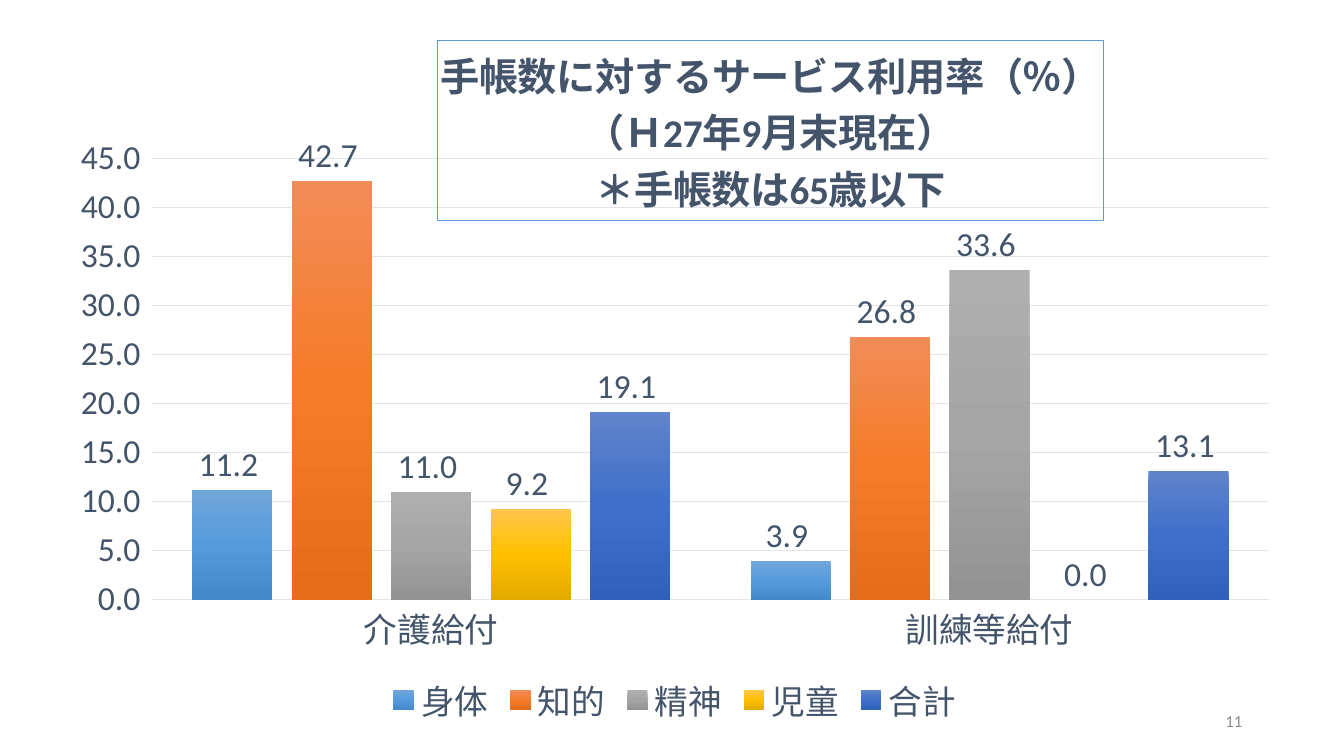
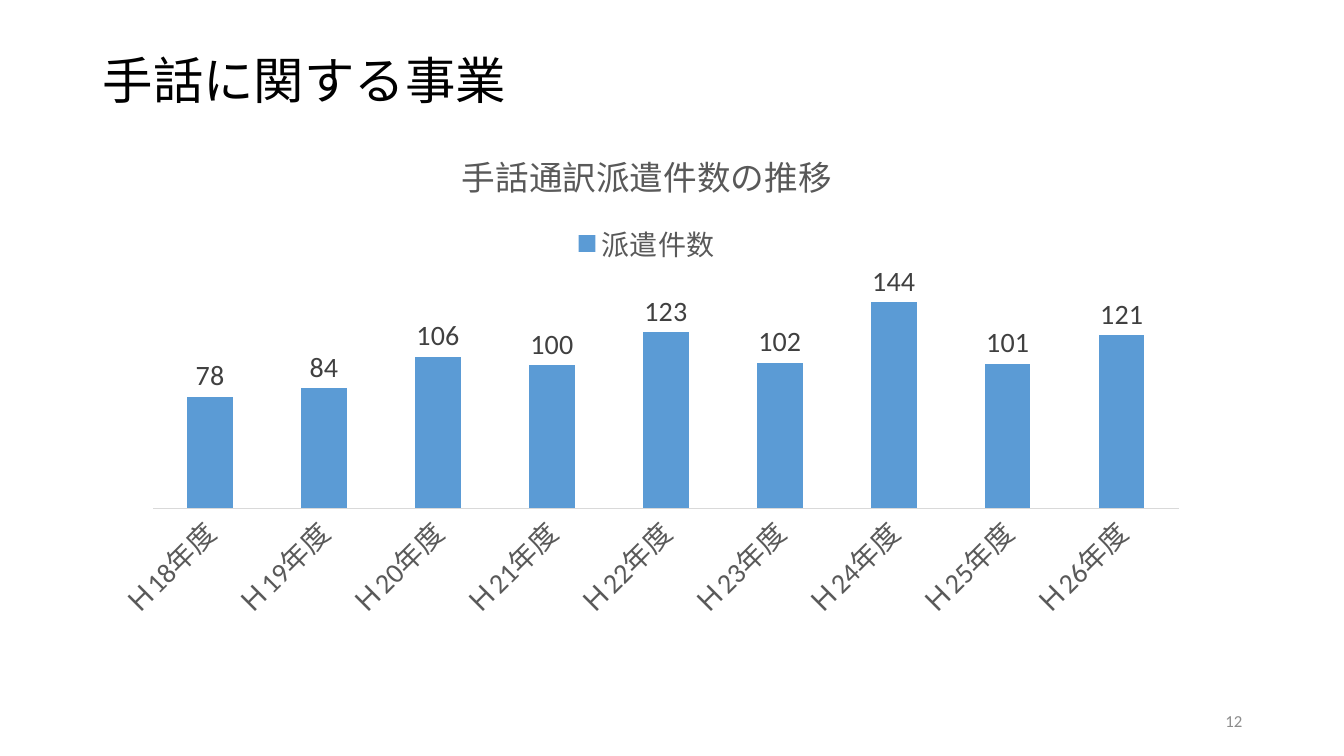
from copy import deepcopy

from lxml import etree
from pptx import Presentation
from pptx.chart.data import CategoryChartData
from pptx.dml.color import RGBColor
from pptx.enum.chart import XL_CHART_TYPE, XL_LABEL_POSITION, XL_LEGEND_POSITION, XL_TICK_MARK
from pptx.enum.text import MSO_ANCHOR, PP_ALIGN
from pptx.oxml.ns import qn
from pptx.util import Inches, Pt

COLUMNS = XL_CHART_TYPE.COLUMN_CLUSTERED
OUTSIDE_END = XL_LABEL_POSITION.OUTSIDE_END
LEGEND_TOP, LEGEND_BOTTOM = XL_LEGEND_POSITION.TOP, XL_LEGEND_POSITION.BOTTOM
NO_TICK = XL_TICK_MARK.NONE
MIDDLE = MSO_ANCHOR.MIDDLE
LEFT, RIGHT = PP_ALIGN.LEFT, PP_ALIGN.RIGHT

FONT = "Calibri"
BLACK, PAGE_GREY = "000000", "8C8C8C"
SLATE, GREY, DARK_GREY = "44546A", "595959", "404040"
BLUE = "5B9BD5"


def color(hex_string):
    return RGBColor.from_string(hex_string)


def place_manually(parent, index, **shares):
    for old_layout in parent.findall(qn("c:layout")):
        parent.remove(old_layout)
    layout = etree.Element(qn("c:layout"))
    manual = etree.SubElement(layout, qn("c:manualLayout"))
    for name, value in shares.items():
        etree.SubElement(manual, qn(f"c:{name}")).set("val", str(value))
    parent.insert(index, layout)


presentation = Presentation()
presentation.slide_width = Inches(13.33)
presentation.slide_height = Inches(7.5)
blank_layout = presentation.slide_layouts[6]

page_number_place = (9.42, 6.95, 3, 0.4)
heading_place = (0.92, 0.4, 11.5, 0.85)

pages = [
    {
        "number": "11",
        "heading": "",
        "place": (0.8, 0.4, 11.79, 6.85),
        "title": "手帳数に対するサービス利用率（％）\n（Ｈ27年9月末現在）\n＊手帳数は65歳以下",
        "title_font": {"size": Pt(28), "bold": True},
        "text_size": Pt(24),
        "text_color": SLATE,
        "label_color": SLATE,
        "line_color": "E0E5EB",
        "number_format": "0.0_ ",
        "legend": LEGEND_BOTTOM,
        "spacing": {"gap_width": 100, "overlap": -24},
        "value_axis": {"visible": True, "has_major_gridlines": True,
                       "minimum_scale": 0, "maximum_scale": 45, "major_unit": 5},
        "categories": ["介護給付", "訓練等給付"],
        "series": [
            ("身体", (11.2, 3.9), ("71A6DB", "559BDB", "448ACA")),
            ("知的", (42.7, 26.8), ("F18C57", "F67B28", "E56C19")),
            ("精神", (11, 33.6), ("AFAFAF", "A5A5A5", "939393")),
            ("児童", (9.2, 0), ("FFC64B", "FFC000", "E3AB00")),
            ("合計", (19.1, 13.1), ("6183CB", "3E70CA", "3062BB")),
        ],
    },
    {
        "number": "12",
        "heading": "手話に関する事業",
        "place": (0.92, 1.25, 10.99, 5.02),
        "title": "手話通訳派遣件数の推移",
        "title_font": {"size": Pt(24), "bold": False},
        "text_size": Pt(20),
        "text_color": GREY,
        "label_color": DARK_GREY,
        "line_color": "D9D9D9",
        "number_format": "General",
        "legend": LEGEND_TOP,
        "spacing": {"gap_width": 150},
        "value_axis": {"visible": False, "has_major_gridlines": False, "minimum_scale": 0},
        "categories": [f"Ｈ{year}年度" for year in range(18, 27)],
        "series": [("派遣件数", (78, 84, 106, 100, 123, 102, 144, 101, 121), (BLUE,))],
    },
]

charts = []
for page in pages:
    slide = presentation.slides.add_slide(blank_layout)

    texts = [
        (page["heading"], heading_place, LEFT, Pt(36), BLACK, 0.9),
        (page["number"], page_number_place, RIGHT, Pt(12), PAGE_GREY, 1.0),
    ]
    for text, place, alignment, size, text_color, line_spacing in texts:
        if not text:
            continue
        shape = slide.shapes.add_textbox(*map(Inches, place))
        text_frame = shape.text_frame
        text_frame.word_wrap = True
        text_frame.vertical_anchor = MIDDLE
        paragraph = text_frame.paragraphs[0]
        paragraph.alignment = alignment
        paragraph.line_spacing = line_spacing
        run = paragraph.add_run()
        run.text = text
        run.font.name = FONT
        run.font.size = size
        run.font.color.rgb = color(text_color)

    chart_data = CategoryChartData(number_format=page["number_format"])
    chart_data.categories = page["categories"]
    for name, values, _ in page["series"]:
        chart_data.add_series(name, values)
    chart = slide.shapes.add_chart(COLUMNS, *map(Inches, page["place"]), chart_data).chart
    charts.append(chart)

    plot = chart.plots[0]
    plot.vary_by_categories = False
    for name, value in page["spacing"].items():
        setattr(plot, name, value)

    category_axis, value_axis = chart.category_axis, chart.value_axis
    for name, value in page["value_axis"].items():
        setattr(value_axis, name, value)
    for axis in (category_axis, value_axis):
        axis.major_tick_mark = axis.minor_tick_mark = NO_TICK
    value_axis.format.line.fill.background()
    value_axis.tick_labels.number_format = page["number_format"]
    value_axis.tick_labels.number_format_is_linked = False

    lines = [category_axis.format.line]
    if value_axis.has_major_gridlines:
        lines.append(value_axis.major_gridlines.format.line)
    for line in lines:
        line.color.rgb = color(page["line_color"])
        line.width = Pt(0.75)

    chart.has_legend = True
    chart.legend.position = page["legend"]
    chart.legend.include_in_layout = False

    plot.has_data_labels = True
    labels = plot.data_labels
    labels.show_value = True
    labels.position = OUTSIDE_END
    labels.number_format = page["number_format"]
    labels.number_format_is_linked = False

    fonts = [
        (chart.font, BLACK),
        (category_axis.tick_labels.font, page["text_color"]),
        (value_axis.tick_labels.font, page["text_color"]),
        (chart.legend.font, page["text_color"]),
        (labels.font, page["label_color"]),
    ]
    for font, font_color in fonts:
        font.name = FONT
        font.size = page["text_size"]
        font.color.rgb = color(font_color)

    chart.has_title = True
    chart.chart_title.include_in_layout = False
    chart.chart_title.text_frame.text = page["title"]
    for paragraph in chart.chart_title.text_frame.paragraphs:
        font = paragraph.runs[0].font
        font.name = FONT
        font.color.rgb = color(page["text_color"])
        for name, value in page["title_font"].items():
            setattr(font, name, value)

    for series, (_, _, shades) in zip(plot.series, page["series"]):
        series.invert_if_negative = False
        fill = series.format.fill
        if len(shades) == 1:
            fill.solid()
            fill.fore_color.rgb = color(shades[0])
            continue
        fill.gradient()
        fill.gradient_angle = 270
        stop_list = next(series.format.fill._xPr.iter(qn("a:gsLst")))
        stop_list.append(deepcopy(stop_list[0]))
        for index, (stop, shade) in enumerate(zip(fill.gradient_stops, shades)):
            stop.color.rgb = color(shade)
            stop.position = index / (len(shades) - 1)

usage_chart, dispatch_chart = charts

title_line = usage_chart.chart_title.format.line
title_line.color.rgb = color(BLUE)
title_line.width = Pt(0.75)
title_element = usage_chart.chart_title._element
place_manually(title_element, 1, xMode="edge", yMode="edge", x=0.3, y=0)
plot_area = next(usage_chart._chartSpace.iter(qn("c:plotArea")))
place_manually(plot_area, 0, layoutTarget="inner", xMode="edge", yMode="edge",
               x=0.06, y=0.17, w=0.94, h=0.64)

label_body = dispatch_chart.category_axis._element.find(f"{qn('c:txPr')}/{qn('a:bodyPr')}")
label_body.set("rot", "-2700000")
label_body.set("vert", "horz")

presentation.save("out.pptx")
